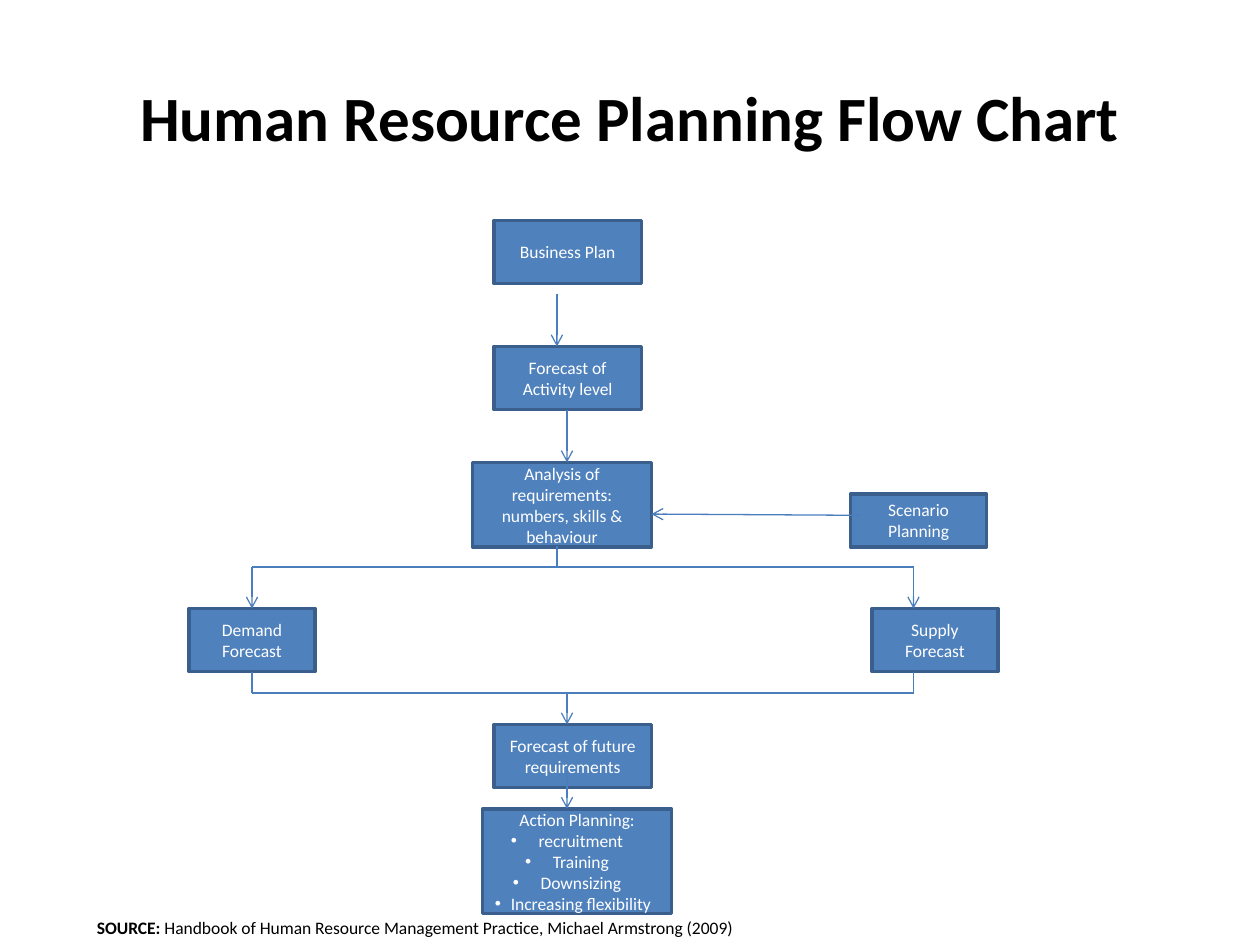
from lxml import etree
from pptx import Presentation
from pptx.dml.color import RGBColor
from pptx.enum import shapes, text
from pptx.oxml.ns import qn
from pptx.util import Inches, Pt

BLUE = RGBColor(0x4F, 0x81, 0xBD)
EDGE = RGBColor(0x3A, 0x5F, 0x8C)
WIRE = RGBColor(0x4B, 0x7E, 0xBC)
WHITE = RGBColor(0xFF, 0xFF, 0xFF)
BLACK = RGBColor(0, 0, 0)

MAIN = 4.5
STEM = 4.42
LEFT, RIGHT = 2, 7.25
SPLIT, JOIN = 4.5, 5.5

BOXES = [
    ((3.92, 1.75, 1.17, 0.5), ["Business Plan"]),
    ((3.92, 2.75, 1.17, 0.5), ["Forecast of", "Activity level"]),
    ((3.75, 3.67, 1.42, 0.67),
     ["Analysis of requirements: numbers, skills & behaviour"]),
    ((6.75, 3.92, 1.08, 0.42), ["Scenario Planning"]),
    ((1.5, 4.83, 1, 0.5), ["Demand Forecast"]),
    ((6.92, 4.83, 1, 0.5), ["Supply Forecast"]),
    ((3.92, 5.75, 1.25, 0.5), ["Forecast of future", "requirements"]),
]
ACTION = (3.83, 6.42, 1.5, 0.83)
STEPS = ["recruitment", "Training", "Downsizing", "Increasing flexibility"]

ARROWS = [
    (STEM, 2.33, STEM, 2.75),
    (MAIN, 3.25, MAIN, 3.67),
    (6.83, 4.09, 5.17, 4.08),
    (LEFT, SPLIT, LEFT, 4.83),
    (RIGHT, SPLIT, RIGHT, 4.83),
    (MAIN, JOIN, MAIN, 5.75),
    (MAIN, 6.08, MAIN, 6.42),
]
LINES = [
    (STEM, 4.33, STEM, SPLIT),
    (LEFT, SPLIT, RIGHT, SPLIT),
    (LEFT, 5.33, LEFT, JOIN),
    (RIGHT, 5.33, RIGHT, JOIN),
    (LEFT, JOIN, RIGHT, JOIN),
]


def write(para, words, size=10, color=BLACK, bold=False, align=None):
    """Add a formatted run to a paragraph."""
    run = para.add_run()
    run.text = words
    run.font.name = "Calibri"
    run.font.size = Pt(size)
    run.font.bold = bold
    run.font.color.rgb = color
    if align is not None:
        para.alignment = align


def bullet(para):
    """Give a paragraph a hanging bullet."""
    props = para._p.get_or_add_pPr()
    props.set("marL", str(Inches(0.06)))
    props.set("indent", str(-Inches(0.22)))
    etree.SubElement(props, qn("a:buFont")).set("typeface", "Arial")
    etree.SubElement(props, qn("a:buChar")).set("char", "•")


def add_box(slide, box, rows, items=()):
    """Draw a step with its rows of text and any bulleted items."""
    shape = slide.shapes.add_shape(
        shapes.MSO_SHAPE.RECTANGLE, *map(Inches, box))
    shape.shadow.inherit = False
    shape.fill.solid()
    shape.fill.fore_color.rgb = BLUE
    shape.line.color.rgb = EDGE
    shape.line.width = Pt(2)
    frame = shape.text_frame
    frame.word_wrap = True
    frame.vertical_anchor = text.MSO_ANCHOR.MIDDLE
    for i, row in enumerate([*rows, *items]):
        para = frame.add_paragraph() if i else frame.paragraphs[0]
        write(para, row, color=WHITE, align=text.PP_ALIGN.CENTER)
        if i >= len(rows):
            bullet(para)


def add_line(slide, ends, arrow=False):
    """Draw a straight line, with an arrowhead at its end if asked."""
    line = slide.shapes.add_connector(
        shapes.MSO_CONNECTOR.STRAIGHT, *map(Inches, ends))
    line.line.color.rgb = WIRE
    line.line.width = Pt(0.75)
    if arrow:
        etree.SubElement(line.line._get_or_add_ln(),
                         qn("a:tailEnd")).set("type", "arrow")
    etree.SubElement(line._element.spPr, qn("a:effectLst"))


def add_title(slide, box):
    """Place and fill the title."""
    title = slide.shapes.title
    title.left, title.top, title.width, title.height = map(Inches, box)
    title.text_frame.vertical_anchor = text.MSO_ANCHOR.MIDDLE
    write(title.text_frame.paragraphs[0],
          "Human Resource Planning Flow Chart", size=36, bold=True,
          align=text.PP_ALIGN.CENTER)


def add_chart(slide):
    """Draw the steps and the lines that join them."""
    for box, rows in BOXES:
        add_box(slide, box, rows)
    add_box(slide, ACTION, ["Action Planning:"], STEPS)
    for ends in LINES:
        add_line(slide, ends)
    for ends in ARROWS:
        add_line(slide, ends, arrow=True)


def add_source(slide, box):
    """Write the source note."""
    frame = slide.shapes.add_textbox(*map(Inches, box)).text_frame
    frame.word_wrap = False
    frame.auto_size = text.MSO_AUTO_SIZE.SHAPE_TO_FIT_TEXT
    para = frame.paragraphs[0]
    write(para, "SOURCE:", bold=True)
    write(para, " Handbook of Human Resource Management Practice, "
                "Michael Armstrong (2009)")


def main():
    """Build and save the slide."""
    deck = Presentation()
    deck.slide_width, deck.slide_height = Inches(10), Inches(7.5)
    slide = deck.slides.add_slide(deck.slide_layouts[5])
    add_title(slide, (0.5, 0.3, 9, 1.25))
    add_chart(slide)
    add_source(slide, (0.67, 7.23, 5.28, 0.27))
    deck.save("out.pptx")


if __name__ == "__main__":
    main()
